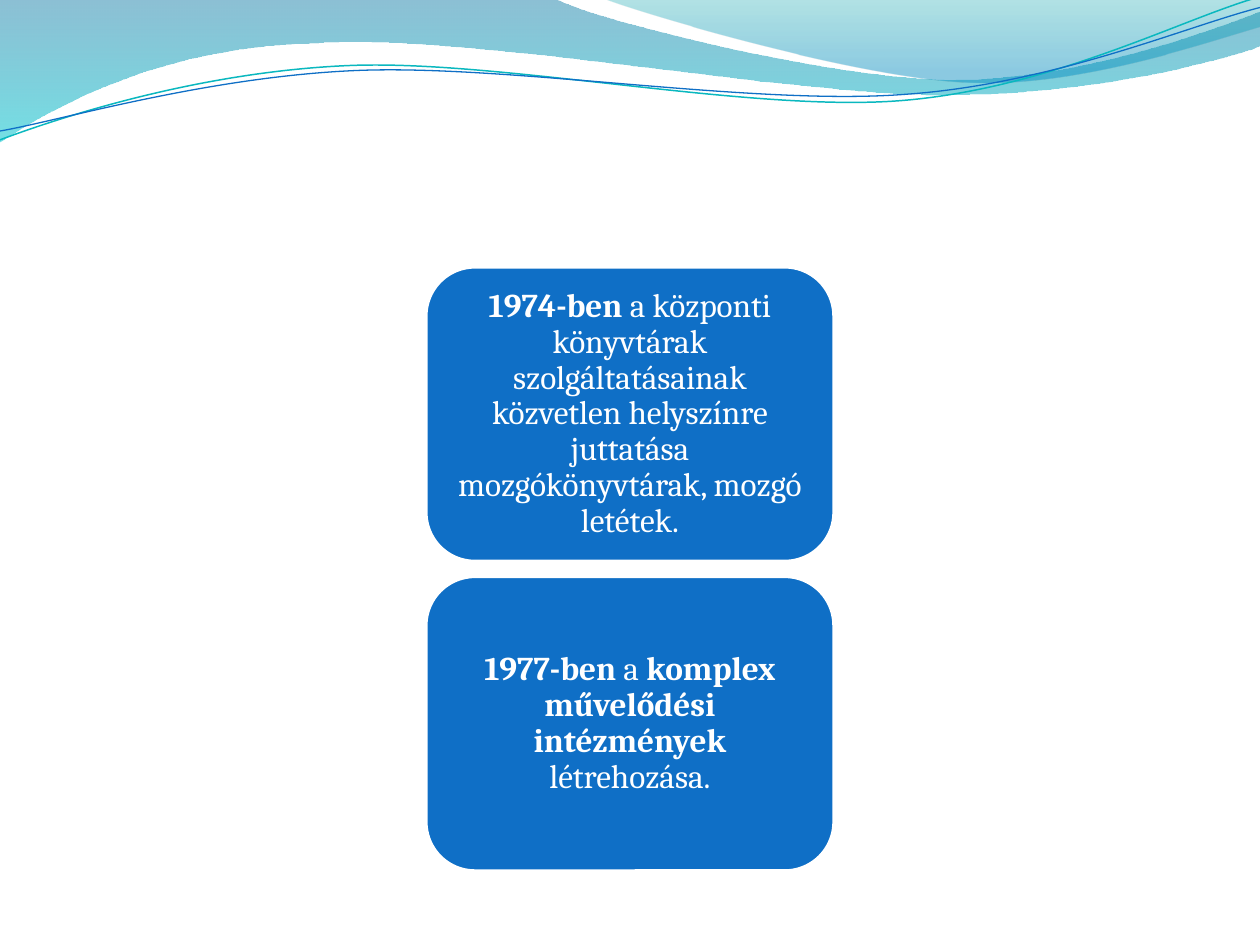
import math

import pptx
import pptx.dml.color
import pptx.enum.shapes
import pptx.enum.text
import pptx.oxml.ns
import pptx.util
from lxml import etree

Cm = pptx.util.Cm
Pt = pptx.util.Pt
qn = pptx.oxml.ns.qn
UNIT = Cm(2.54)  # wave points are given in inches


def color(hex_string):
    return pptx.dml.color.RGBColor.from_string(hex_string)


def turned(point, center, degrees):
    angle = math.radians(degrees)
    x, y = point[0] - center[0], point[1] - center[1]
    return (center[0] + x * math.cos(angle) - y * math.sin(angle),
            center[1] + x * math.sin(angle) + y * math.cos(angle))


class SlideMaker:
    font_name = "Cambria"
    font_size = Pt(19)
    blue = "0F6FC6"
    teal = "0AB8BF"
    white = "FFFFFF"
    tilt = 2.7  # degrees the wave lines are turned to the left

    def __init__(self, page):
        self.page = page

    def outline(self, start, segments, closed, center=None):
        """A segment is one point (line) or three points (cubic curve) in a row."""
        points = [start] + [seg[i:i + 2] for seg in segments for i in range(0, len(seg), 2)]
        if center:
            points = [turned(point, center, self.tilt) for point in points]
        scaled = [(x * UNIT, y * UNIT) for x, y in points]
        builder = self.page.shapes.build_freeform(*scaled[0], scale=1.0)
        builder.add_line_segments(scaled[1:], close=closed)
        shape = builder.convert_to_shape()
        shape.shadow.inherit = False

        # Join the three points of each curve segment into one curve
        steps = iter(shape._element.xpath(".//a:lnTo"))
        for segment in segments:
            first = next(steps)
            if len(segment) == 6:
                first.tag = qn("a:cubicBezTo")
                for step in (next(steps), next(steps)):
                    first.append(step[0])
                    step.getparent().remove(step)
        return shape

    def band(self, start, segments, stops):
        """Closed wave with a downward, partly transparent gradient."""
        shape = self.outline(start, segments, closed=True)
        shape.line.fill.background()
        shape.fill.gradient()
        shape.fill.gradient_angle = 270
        for stop, (position, hex_string, _) in zip(shape.fill.gradient_stops, stops):
            stop.position = position
            stop.color.rgb = color(hex_string)
        tones = shape._element.xpath(".//a:gs/a:srgbClr")
        for tone, (_, _, opacity) in zip(tones, stops):
            alpha = etree.SubElement(tone, qn("a:alpha"))
            alpha.set("val", str(opacity * 1000))

    def wave_line(self, start, segments, center, hex_string, width):
        shape = self.outline(start, segments, closed=False, center=center)
        shape.rotation = 360 - self.tilt
        shape.fill.background()
        shape.line.color.rgb = color(hex_string)
        shape.line.width = Pt(width)

    def card(self, left, top, width, height):
        box = self.page.shapes.add_shape(
            pptx.enum.shapes.MSO_SHAPE.ROUNDED_RECTANGLE,
            Cm(left), Cm(top), Cm(width), Cm(height))
        box.shadow.inherit = False
        box.fill.solid()
        box.fill.fore_color.rgb = color(self.blue)
        box.line.color.rgb = color(self.white)
        box.line.width = Pt(2)

    def text(self, left, top, width, height, spans):
        """Centred text; spans are (text, bold) pairs."""
        box = self.page.shapes.add_textbox(Cm(left), Cm(top), Cm(width), Cm(height))
        frame = box.text_frame
        frame.word_wrap = True
        frame.vertical_anchor = pptx.enum.text.MSO_ANCHOR.MIDDLE
        frame.margin_left = frame.margin_right = Cm(0.2)
        frame.margin_top = frame.margin_bottom = Cm(0.1)
        para = frame.paragraphs[0]
        para.alignment = pptx.enum.text.PP_ALIGN.CENTER
        para.line_spacing = 0.9
        para.font.name = self.font_name
        para.font.size = self.font_size
        para.font.color.rgb = color(self.white)
        for text, bold in spans:
            span = para.add_run()
            span.text = text
            span.font.bold = bold


def main():
    deck = pptx.Presentation()
    deck.slide_width, deck.slide_height = Cm(25.4), Cm(19.05)
    maker = SlideMaker(deck.slides.add_slide(deck.slide_layouts[6]))

    # Wave bands along the top
    maker.band((0, 0), [(4.4, -0.01),
                        (4.76, 0.17, 6.64, 0.63, 7.58, 0.63),
                        (8.53, 0.63, 9.58, 0.26, 10, 0.09),
                        (10.01, 0.36),
                        (9.83, 0.44, 8.7, 0.76, 7.46, 0.75),
                        (6.22, 0.75, 3.82, 0.28, 2.57, 0.34),
                        (1.29, 0.36, 0.46, 0.83, -0.01, 1.13)],
               [(0, "0074A1", 45), (1, "00C6CF", 55)])
    maker.band((4.79, -0.01), [(5.09, 0.11, 6.82, 0.62, 7.69, 0.65),
                               (8.56, 0.69, 9.61, 0.32, 10, 0.21),
                               (10, 0)],
               [(0, "00A1A9", 30), (0.8, "008BBF", 45)])

    # Thin wave lines
    maker.wave_line((0, 1.11), [(0.48, 0.93, 1.58, 0.57, 2.77, 0.52),
                                (3.95, 0.47, 5.93, 0.89, 7.13, 0.8),
                                (8.33, 0.71, 9.38, 0.15, 9.98, -0.02)],
                    (4.99, 0.58), maker.teal, 0.85)
    maker.wave_line((0, 1.04), [(0.47, 0.96, 1.64, 0.61, 2.83, 0.56),
                                (4.03, 0.51, 5.97, 0.84, 7.17, 0.75),
                                (8.36, 0.67, 9.41, 0.21, 10, 0.06)],
                    (5, 0.59), maker.blue, 0.75)

    # Stacked event cards
    events = [
        [("1974-ben", True),
         (" a központi könyvtárak szolgáltatásainak közvetlen helyszínre "
          "juttatása mozgókönyvtárak, mozgó letétek.", False)],
        [("1977-ben", True), (" a ", False),
         ("komplex művelődési intézmények", True), (" létrehozása.", False)],
    ]
    width, height, gap, inset = 8.23, 5.94, 0.3, 0.29
    left = (25.4 - width) / 2
    for index, spans in enumerate(events):
        top = 5.38 + index * (height + gap)
        maker.card(left, top, width, height)
        maker.text(left + inset, top + inset, width - 2 * inset, height - 2 * inset, spans)

    deck.save("out.pptx")


if __name__ == "__main__":
    main()
